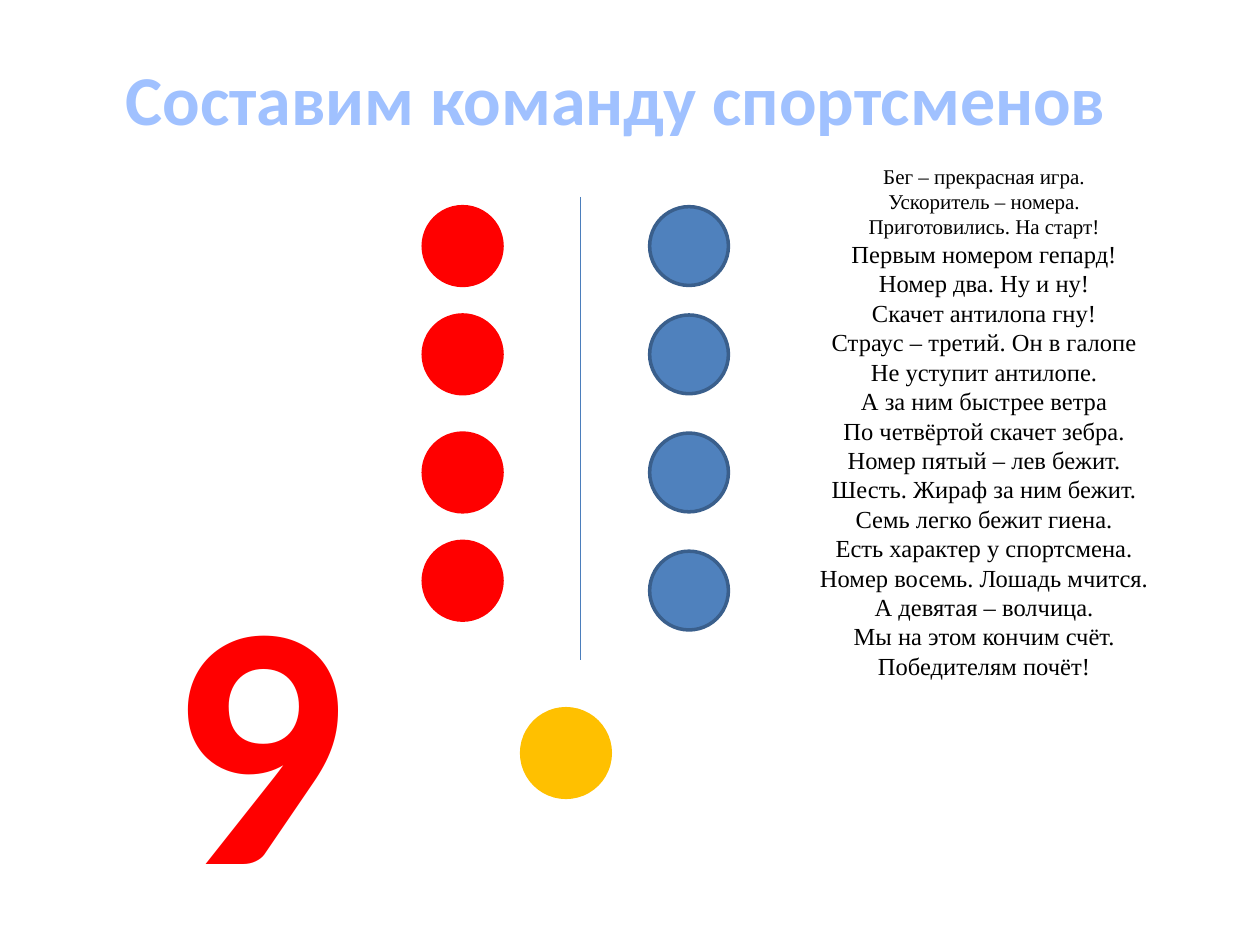
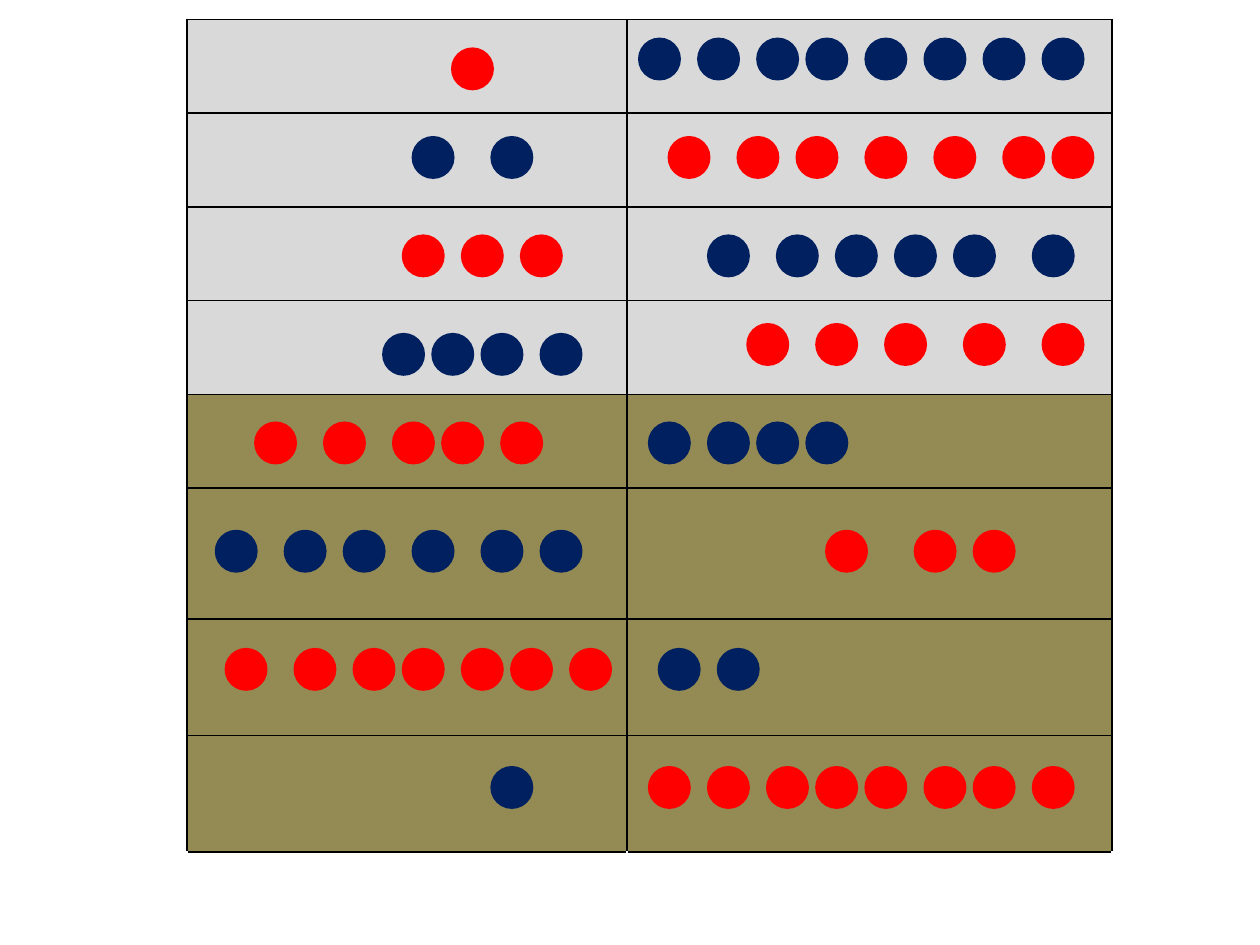
"""Build two counting slides: a team of athletes and the ways to make up nine."""
from dataclasses import dataclass

from lxml import etree
from pptx import Presentation
from pptx import util as u
from pptx.dml.color import RGBColor
from pptx.enum import shapes, text
from pptx.oxml import ns

TITLE = "Составим команду спортсменов"
TOTAL = "9"
POEM_START = [
    "Бег – прекрасная игра.",
    "Ускоритель – номера.",
    "Приготовились. На старт!",
]
POEM_RUNNERS = [
    "Первым номером гепард!",
    "Номер два. Ну и ну!",
    "Скачет антилопа гну!",
    "Страус – третий. Он в галопе",
    "Не уступит антилопе.",
    "А за ним быстрее ветра",
    "По четвёртой скачет зебра.",
    "Номер пятый – лев бежит.",
    "Шесть. Жираф за ним бежит.",
    "Семь легко бежит гиена.",
    "Есть характер у спортсмена.",
    "Номер восемь. Лошадь мчится.",
    "А девятая – волчица.",
    "Мы на этом кончим счёт.",
    "Победителям почёт!",
]

RED_TEAM = (43, [21, 32, 44, 55])
BLUE_TEAM = (66, [21, 32, 44, 56])
CAPTAIN = (53, 72)
# Each side of a pair: grid row, then the grid columns of its counters.
PAIRS = [
    ((5, [46]), (4, [65, 71, 77, 82, 88, 94, 100, 106])),
    ((14, [42, 50]), (14, [68, 75, 81, 88, 95, 102, 107])),
    ((24, [41, 47, 53]), (24, [72, 79, 85, 91, 97, 105])),
    ((34, [39, 44, 49, 55]), (33, [76, 83, 90, 98, 106])),
    ((43, [26, 33, 40, 45, 51]), (43, [66, 72, 77, 82])),
    ((54, [22, 29, 35, 42, 49, 55]), (54, [84, 93, 99])),
    ((66, [23, 30, 36, 41, 47, 52, 58]), (66, [67, 73])),
    ((78, [50]), (78, [66, 72, 78, 83, 88, 94, 99, 105])),
]
COLUMN_WIDTHS = [8.87, 9.78]
ROW_HEIGHTS = [1.89] * 5 + [2.64, 2.35, 2.35, 1.89]


@dataclass(frozen=True)
class Theme:
    """Colours, fonts and type sizes."""
    red: str = "FF0000"
    navy: str = "002060"
    blue: str = "4F81BD"
    blue_edge: str = "3A5F8C"
    divider: str = "4B7EBC"
    gold: str = "FFC000"
    black: str = "000000"
    upper_rows: str = "D9D9D9"
    lower_rows: str = "948A54"
    title_edge: str = "467AB8"
    total_edge: str = "D73A36"
    title_stops: tuple = ((0, "BFD3F9"), (9, "A0C1FF"), (50, "003D85"),
                          (79, "A0C1FF"), (100, "BFD3F9"))
    display: str = "Calibri"
    verse: str = "Times New Roman"
    title_size: int = 40
    total_size: int = 199
    start_size: int = 12
    runners_size: int = 14


THEME = Theme()


def grid(steps):
    """Turn grid steps, 64 to 12.7 cm, into a length."""
    return u.Cm(12.7 * steps / 64)


def add_xml(parent, tag, **attributes):
    """Append a drawing element with the given attributes."""
    return etree.SubElement(parent, ns.qn(tag), attributes)


def add_xml_line(parent, tag, color, width):
    """Append a solid line element and return it."""
    line = add_xml(parent, tag, w=str(u.Pt(width)))
    add_xml(add_xml(line, "a:solidFill"), "a:srgbClr", val=color)
    return line


def write(frame, lines, size, font, color=None, bold=False, edge=None, stops=(), wrap=True):
    """Add centred lines to a text frame, with an optional outline and gradient."""
    frame.word_wrap = wrap
    frame.auto_size = text.MSO_AUTO_SIZE.SHAPE_TO_FIT_TEXT
    frame.vertical_anchor = text.MSO_ANCHOR.TOP
    for line in lines:
        first = frame.paragraphs[0]
        paragraph = frame.add_paragraph() if first.runs else first
        paragraph.alignment = text.PP_ALIGN.CENTER
        run = paragraph.add_run()
        run.text = line
        run.font.size, run.font.bold = u.Pt(size), bold
        properties = run.font._element
        if edge:
            add_xml_line(properties, "a:ln", *edge)
        if stops:
            gradient = add_xml(properties, "a:gradFill")
            stop_list = add_xml(gradient, "a:gsLst")
            for percent, stop_color in stops:
                stop = add_xml(stop_list, "a:gs", pos=str(percent * 1000))
                add_xml(stop, "a:srgbClr", val=stop_color)
            add_xml(gradient, "a:lin", ang="5400000", scaled="0")
        else:
            run.font.color.rgb = RGBColor.from_string(color)
        run.font.name = font


def add_counter(slide, column, row, color, edge=None, size=4):
    """Draw one round counter on the grid."""
    counter = slide.shapes.add_shape(shapes.MSO_SHAPE.FLOWCHART_CONNECTOR,
                                     grid(column), grid(row), grid(size), grid(size))
    counter.shadow.inherit = False
    counter.fill.solid()
    counter.fill.fore_color.rgb = RGBColor.from_string(color)
    counter.line.color.rgb = RGBColor.from_string(edge or color)
    counter.line.width = u.Pt(2)


def build_team(deck):
    """Build the slide with the two teams, the captain and the poem."""
    slide = deck.slides.add_slide(deck.slide_layouts[5])
    title = slide.shapes.title
    title.left, title.top, title.width, title.height = map(u.Cm, (2.18, 0.99, 20.47, 1.96))
    write(title.text_frame, [TITLE], THEME.title_size, THEME.display, bold=True,
          edge=(THEME.title_edge, 0.83), stops=THEME.title_stops, wrap=False)

    divider = slide.shapes.add_connector(shapes.MSO_CONNECTOR.STRAIGHT,
                                         grid(59), grid(20), grid(59), grid(67))
    divider.line.color.rgb = RGBColor.from_string(THEME.divider)
    divider.line.width = u.Pt(0.75)
    add_xml(divider._element.spPr, "a:effectLst")

    add_counter(slide, *CAPTAIN, THEME.gold, size=9)
    for (column, rows), color, edge in ((RED_TEAM, THEME.red, THEME.red),
                                        (BLUE_TEAM, THEME.blue, THEME.blue_edge)):
        for row in rows:
            add_counter(slide, column, row, color, edge, size=8)

    total = slide.shapes.add_textbox(*map(u.Cm, (3.17, 10.29, 2.18, 8.76)))
    write(total.text_frame, [TOTAL], THEME.total_size, THEME.display, THEME.red,
          bold=True, edge=(THEME.total_edge, 1.42))
    poem = slide.shapes.add_textbox(*map(u.Cm, (13.49, 3.17, 12.7, 10.77)))
    write(poem.text_frame, POEM_START, THEME.start_size, THEME.verse, THEME.black)
    write(poem.text_frame, POEM_RUNNERS, THEME.runners_size, THEME.verse, THEME.black)


def build_pairs(deck):
    """Build the table with the counters of each pair."""
    slide = deck.slides.add_slide(deck.slide_layouts[6])
    table = slide.shapes.add_table(
        len(ROW_HEIGHTS), len(COLUMN_WIDTHS), u.Cm(3.77), u.Cm(0.39),
        u.Cm(sum(COLUMN_WIDTHS)), u.Cm(sum(ROW_HEIGHTS))).table
    table.first_row = table.horz_banding = False
    for column, width in zip(table.columns, COLUMN_WIDTHS):
        column.width = u.Cm(width)
    for index, (row, height) in enumerate(zip(table.rows, ROW_HEIGHTS)):
        row.height = u.Cm(height)
        filled = index < len(PAIRS)
        borders = ("a:lnL", "a:lnR", "a:lnT", "a:lnB") if filled else ("a:lnT",)
        for cell in row.cells:
            properties = cell._tc.get_or_add_tcPr()
            for border in borders:
                add_xml_line(properties, border, THEME.black, 1)
            if filled:
                cell.fill.solid()
                cell.fill.fore_color.rgb = RGBColor.from_string(
                    THEME.upper_rows if index < len(PAIRS) / 2 else THEME.lower_rows)
            else:
                cell.fill.background()

    colors = (THEME.red, THEME.navy)
    for index, pair in enumerate(PAIRS):
        for side, (row, columns) in enumerate(pair):
            for column in columns:
                add_counter(slide, column, row, colors[(index + side) % 2])


def main():
    """Build and save the deck."""
    deck = Presentation()
    deck.slide_width, deck.slide_height = u.Cm(25.4), u.Cm(19.05)
    build_team(deck)
    build_pairs(deck)
    deck.save("out.pptx")


if __name__ == "__main__":
    main()
